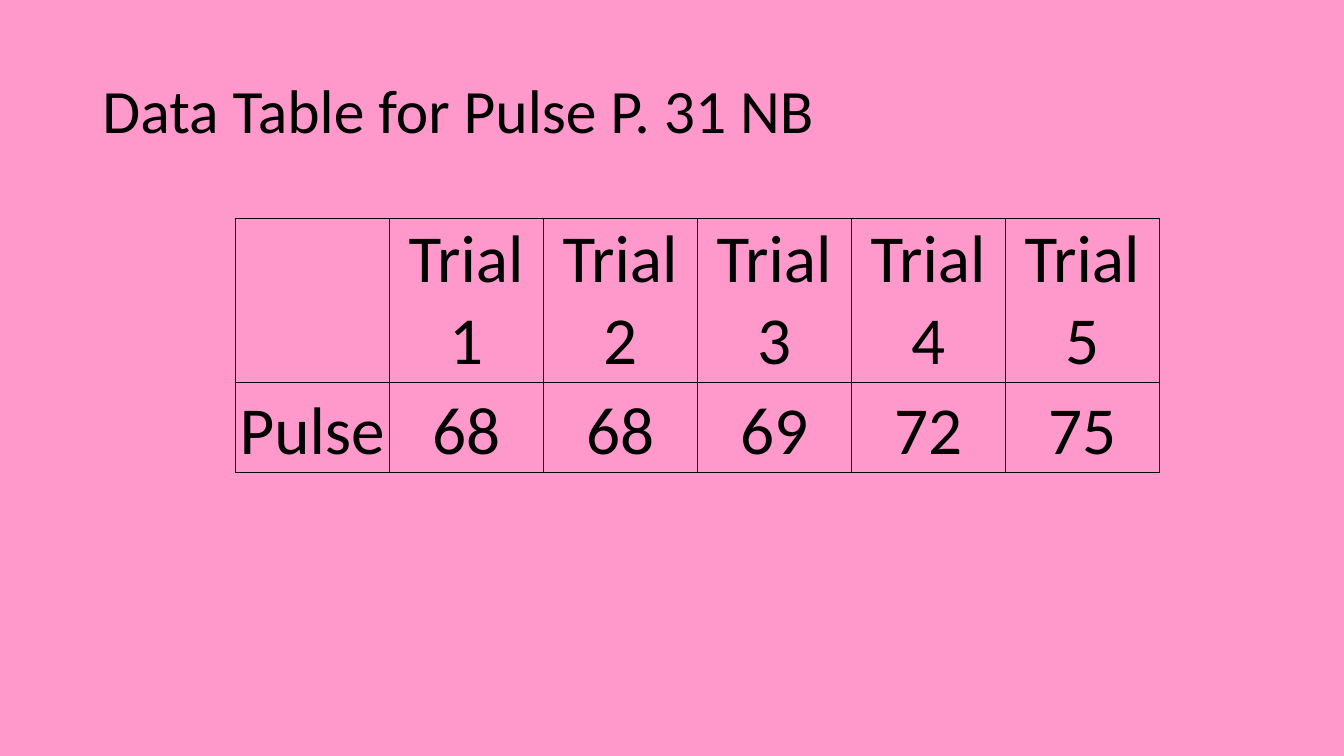
from lxml.etree import SubElement
from pptx import Presentation
from pptx.dml.color import RGBColor
from pptx.enum.text import MSO_ANCHOR, MSO_AUTO_SIZE, PP_ALIGN
from pptx.oxml.ns import qn
from pptx.util import Pt

COLORS = {"background": "FF99CC", "ink": "000000"}
TRIALS = [68, 68, 69, 72, 75]


def write(tf, text, size, color, font, align=PP_ALIGN.LEFT, spacing=1.0):
    """Write one formatted paragraph into a text frame."""
    p = tf.paragraphs[0]
    p.alignment, p.line_spacing = align, spacing
    r = p.add_run()
    r.text = text
    r.font.name, r.font.size, r.font.bold = font, Pt(size), False
    r.font.color.rgb = RGBColor.from_string(color)


class SlideBuilder:
    """Hold the style and the current slide."""

    font = "Calibri"
    ink = COLORS["ink"]

    def __init__(self, prs):
        """Add a title-only slide with a plain background."""
        self.s = prs.slides.add_slide(prs.slide_layouts[5])
        fill = self.s.background.fill
        fill.solid()
        fill.fore_color.rgb = RGBColor.from_string(COLORS["background"])

    def title(self, text, left, top, width, height):
        """Place and fill the title."""
        sp = self.s.shapes.title
        sp.left, sp.top, sp.width, sp.height = map(Pt, (left, top, width, height))
        tf = sp.text_frame
        tf.auto_size, tf.word_wrap = MSO_AUTO_SIZE.NONE, True
        tf.vertical_anchor = MSO_ANCHOR.MIDDLE
        write(tf, text, 44, self.ink, self.font, spacing=0.9)

    def borders(self, cell, width=0.5):
        """Draw a thin line on all four sides of a cell."""
        tcPr = cell._tc.get_or_add_tcPr()
        for i, side in enumerate(("lnL", "lnR", "lnT", "lnB")):
            ln = SubElement(tcPr, qn(f"a:{side}"), w=str(Pt(width)))
            fill = SubElement(ln, qn("a:solidFill"))
            SubElement(fill, qn("a:srgbClr"), val=self.ink)
            tcPr.insert(i, ln)

    def table(self, rows, left, top, col_width, row_heights):
        """Add an unfilled table with equal columns."""
        n = len(rows[0])
        frame = self.s.shapes.add_table(
            len(rows), n, Pt(left), Pt(top), Pt(col_width * n), Pt(sum(row_heights)))
        table = frame.table
        table.first_row = table.horz_banding = False
        for column in table.columns:
            column.width = Pt(col_width)
        for row, height, values in zip(table.rows, row_heights, rows):
            row.height = Pt(height)
            for cell, value in zip(row.cells, values):
                cell.fill.background()
                self.borders(cell)
                cell.margin_left = cell.margin_right = 0
                cell.margin_top = cell.margin_bottom = 0
                cell.vertical_anchor = MSO_ANCHOR.BOTTOM
                if value:
                    write(cell.text_frame, value, 48, self.ink, self.font,
                          align=PP_ALIGN.CENTER)


def main():
    """Build and save the slide."""
    prs = Presentation()
    prs.slide_width, prs.slide_height = Pt(960), Pt(540)
    slide = SlideBuilder(prs)
    slide.title("Data Table for Pulse P. 31 NB", 66, 28.75, 828, 104.4)
    header = [""] + [f"Trial {i}" for i in range(1, len(TRIALS) + 1)]
    pulse = ["Pulse"] + [str(value) for value in TRIALS]
    slide.table([header, pulse], 168, 156, 110, [117, 64.5])
    prs.save("out.pptx")


if __name__ == "__main__":
    main()
